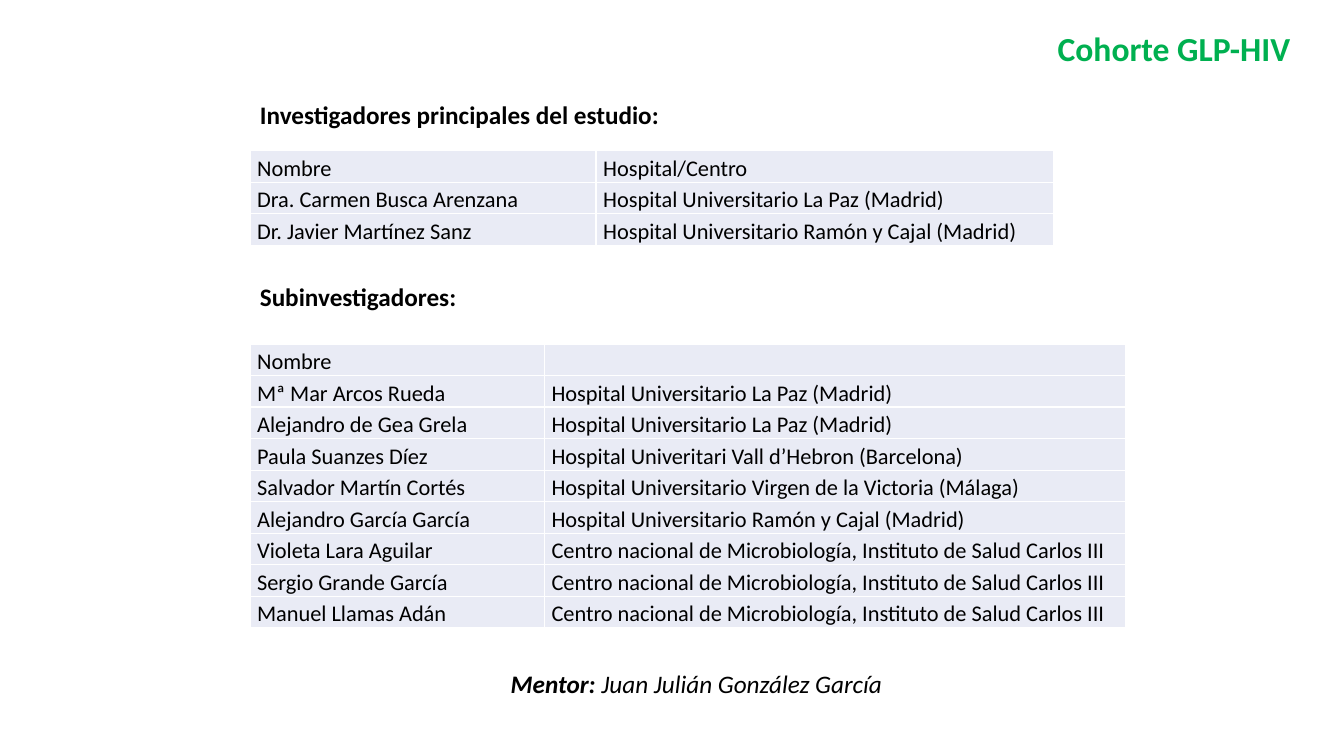
import pptx
import pptx.util
import pptx.dml.color
import pptx.enum.text

Cm = pptx.util.Cm
Pt = pptx.util.Pt
ALIGN = pptx.enum.text.PP_ALIGN


def color(value):
    return pptx.dml.color.RGBColor.from_string(value)


def add_run(p, text, fmt):
    r = p.add_run()
    r.text = text
    r.font.color.rgb = color(fmt["color"])
    for name in ("name", "size", "bold", "italic"):
        setattr(r.font, name, fmt.get(name))


body = {"name": "Calibri", "size": Pt(16), "color": "000000"}
heading = {**body, "size": Pt(18), "bold": True}
mentor_label = {**heading, "italic": True}
mentor_name = {**mentor_label, "bold": False}
title = {**heading, "size": Pt(24), "color": "00B050"}
spaced = {"line_spacing": 1.15, "space_after": Pt(10)}
insets = {"margin_left": Cm(0.18), "margin_right": Cm(0.18), "margin_top": 0, "margin_bottom": 0}

la_paz = "Hospital Universitario La Paz (Madrid)"
ramon_y_cajal = "Hospital Universitario Ramón y Cajal (Madrid)"
microbiologia = "Centro nacional de Microbiología, Instituto de Salud Carlos III"

principales = [
    ("Nombre", "Hospital/Centro"),
    ("Dra. Carmen Busca Arenzana", la_paz),
    ("Dr. Javier Martínez Sanz", ramon_y_cajal),
]
subinvestigadores = [
    ("Nombre", ""),
    ("Mª Mar Arcos Rueda", la_paz),
    ("Alejandro de Gea Grela", la_paz),
    ("Paula Suanzes Díez", "Hospital Univeritari Vall d’Hebron (Barcelona)"),
    ("Salvador Martín Cortés", "Hospital Universitario Virgen de la Victoria (Málaga)"),
    ("Alejandro García García", ramon_y_cajal),
    ("Violeta Lara Aguilar", microbiologia),
    ("Sergio Grande García", microbiologia),
    ("Manuel Llamas Adán", microbiologia),
]

prs = pptx.Presentation()
prs.slide_width = Cm(33.87)
prs.slide_height = Cm(19.05)
s = prs.slides.add_slide(prs.slide_layouts[5])

sp = s.shapes.title
for name, value in {"left": 26.4, "top": 0.58, "width": 6.48, "height": 1.28}.items():
    setattr(sp, name, Cm(value))
tf = sp.text_frame
tf.auto_size = pptx.enum.text.MSO_AUTO_SIZE.NONE
tf.vertical_anchor = pptx.enum.text.MSO_ANCHOR.TOP
tf.paragraphs[0].alignment = ALIGN.LEFT
add_run(tf.paragraphs[0], "Cohorte GLP-HIV", title)

row_height = 0.79
for top, widths, rows in (
    (3.8, (8.72, 11.52), principales),
    (8.67, (7.42, 14.64), subinvestigadores),
):
    table = s.shapes.add_table(
        len(rows), 2, Cm(6.3), Cm(top), Cm(sum(widths)), Cm(row_height * len(rows))
    ).table
    table.first_row = False
    table.horz_banding = False
    for column, width in zip(table.columns, widths):
        column.width = Cm(width)
    for row, texts in zip(table.rows, rows):
        row.height = Cm(row_height)
        for cell, text in zip(row.cells, texts):
            cell.fill.solid()
            cell.fill.fore_color.rgb = color("E9EBF5")
            for name, value in insets.items():
                setattr(cell, name, value)
            if text:
                p = cell.text_frame.paragraphs[0]
                for name, value in spaced.items():
                    setattr(p, name, value)
                add_run(p, text, body)

for left, top, width, runs in (
    (6.3, 2.26, 16.94, [("Investigadores principales del estudio:", heading)]),
    (6.3, 6.86, 16.94, [("Subinvestigadores:", heading)]),
    (12.62, 16.59, 10.21, [("Mentor: ", mentor_label), ("Juan Julián González García", mentor_name)]),
):
    tf = s.shapes.add_textbox(Cm(left), Cm(top), Cm(width), Cm(1.09)).text_frame
    tf.word_wrap = True
    p = tf.paragraphs[0]
    for name, value in {**spaced, "alignment": ALIGN.JUSTIFY}.items():
        setattr(p, name, value)
    for text, fmt in runs:
        add_run(p, text, fmt)

prs.save("out.pptx")
